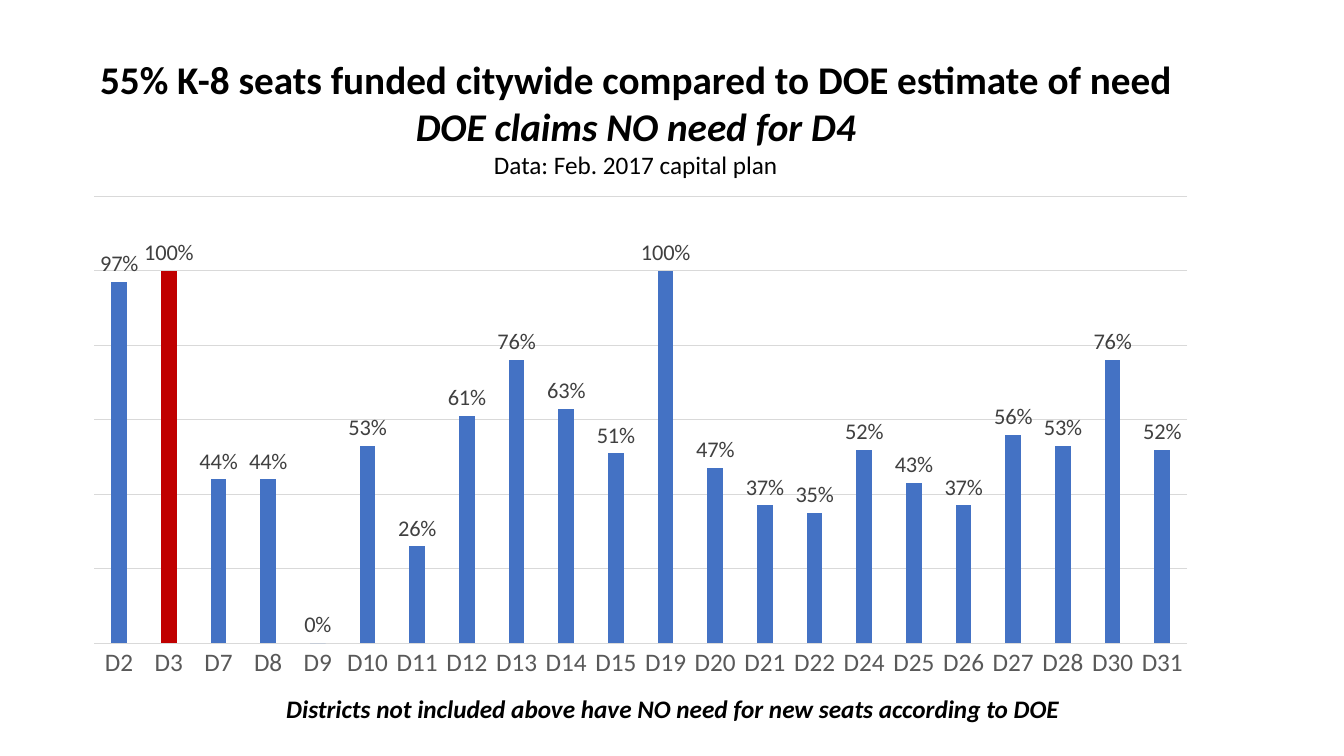
from lxml import etree
from pptx import Presentation
from pptx import util as u
from pptx.chart.data import CategoryChartData
from pptx.dml.color import RGBColor
from pptx.enum import chart as charts, text

WIDTH, HEIGHT = 13.33, 7.5
FONT = "Calibri"
COLORS = {"text": "000000", "bar": "4472C4", "highlight": "C00000",
          "grid": "D9D9D9", "axis": "595959", "label": "404040"}

TITLE_LINES = [
    ("55% K-8 seats funded citywide compared to DOE estimate of need", 28, True, False),
    ("DOE claims NO need for D4", 28, True, True),
    ("Data: Feb. 2017 capital plan", 18, False, False),
]
FOOTNOTE_LINES = [
    ("Districts not included above have NO need for new seats according to DOE", 18, True, True),
]
FUNDED_PERCENT = {
    "D2": 97, "D3": 100, "D7": 44, "D8": 44, "D9": 0, "D10": 53, "D11": 26, "D12": 61,
    "D13": 76, "D14": 63, "D15": 51, "D19": 100, "D20": 47, "D21": 37, "D22": 35,
    "D24": 52, "D25": 43, "D26": 37, "D27": 56, "D28": 53, "D30": 76, "D31": 52,
}
HIGHLIGHTED = "D3"

LEFT, TITLE_TOP, CHART_TOP, FOOTNOTE_TOP = 0.71, 0.5, 1.85, 6.83
TITLE_BOX = (LEFT, TITLE_TOP, 11.19, CHART_TOP - TITLE_TOP)
CHART_BOX = (LEFT, CHART_TOP, 11.29, FOOTNOTE_TOP - CHART_TOP)
FOOTNOTE_BOX = (2.74, FOOTNOTE_TOP, WIDTH - 2.74, HEIGHT - FOOTNOTE_TOP)
PLOT_SHARES = {"x": 0.02, "y": 0.02, "w": 0.96, "h": 0.89}


def color(name):
    return RGBColor.from_string(COLORS[name])


def inches(box):
    return [u.Inches(length) for length in box]


def style(font, size, color_name):
    font.name = FONT
    font.size = u.Pt(size)
    font.color.rgb = color(color_name)


def write(shape, lines, alignment):
    frame = shape.text_frame
    frame.word_wrap = True
    frame.auto_size = text.MSO_AUTO_SIZE.NONE
    frame.vertical_anchor = text.MSO_ANCHOR.TOP
    for index, (words, size, bold, italic) in enumerate(lines):
        paragraph = frame.add_paragraph() if index else frame.paragraphs[0]
        paragraph.alignment = alignment
        run = paragraph.add_run()
        run.text = words
        style(run.font, size, "text")
        run.font.bold, run.font.italic = bold, italic


def place_plot(chart):
    plot_area = chart.element.chart.plotArea
    namespace = plot_area.nsmap["c"]
    for old in plot_area.findall(f"{{{namespace}}}layout"):
        plot_area.remove(old)
    layout = etree.Element(f"{{{namespace}}}layout")
    manual = etree.SubElement(layout, f"{{{namespace}}}manualLayout")
    settings = {"layoutTarget": "inner", "xMode": "edge", "yMode": "edge", **PLOT_SHARES}
    for tag, value in settings.items():
        etree.SubElement(manual, f"{{{namespace}}}{tag}").set("val", str(value))
    plot_area.insert(0, layout)


def add_district_chart(slide):
    data = CategoryChartData(number_format="0%")
    data.categories = list(FUNDED_PERCENT)
    data.add_series("Series 1", [percent / 100 for percent in FUNDED_PERCENT.values()])
    chart = slide.shapes.add_chart(
        charts.XL_CHART_TYPE.COLUMN_CLUSTERED, *inches(CHART_BOX), data).chart
    chart.has_legend = False
    chart.has_title = False
    style(chart.font, 10, "text")

    plot = chart.plots[0]
    plot.gap_width, plot.overlap, plot.vary_by_categories = 219, -27, False
    series = plot.series[0]
    series.format.fill.solid()
    series.format.fill.fore_color.rgb = color("bar")
    highlight = series.points[list(FUNDED_PERCENT).index(HIGHLIGHTED)].format.fill
    highlight.solid()
    highlight.fore_color.rgb = color("highlight")

    labels = series.data_labels
    labels.show_value = True
    labels.number_format, labels.number_format_is_linked = "0%", False
    labels.position = charts.XL_LABEL_POSITION.OUTSIDE_END
    style(labels.font, 16, "label")

    districts, shares = chart.category_axis, chart.value_axis
    districts.major_tick_mark = charts.XL_TICK_MARK.NONE
    style(districts.tick_labels.font, 18, "axis")
    shares.minimum_scale, shares.maximum_scale, shares.major_unit = 0, 1.2, 0.2
    shares.has_major_gridlines = True
    shares.visible = False
    for line in (districts.format.line, shares.major_gridlines.format.line):
        line.color.rgb = color("grid")
        line.width = u.Pt(0.75)
    place_plot(chart)


def main():
    presentation = Presentation()
    presentation.slide_width, presentation.slide_height = inches((WIDTH, HEIGHT))
    slide = presentation.slides.add_slide(presentation.slide_layouts[5])
    add_district_chart(slide)
    title = slide.shapes.title
    title.left, title.top, title.width, title.height = inches(TITLE_BOX)
    write(title, TITLE_LINES, text.PP_ALIGN.CENTER)
    footnote = slide.shapes.add_textbox(*inches(FOOTNOTE_BOX))
    write(footnote, FOOTNOTE_LINES, text.PP_ALIGN.LEFT)
    presentation.save("out.pptx")


if __name__ == "__main__":
    main()
